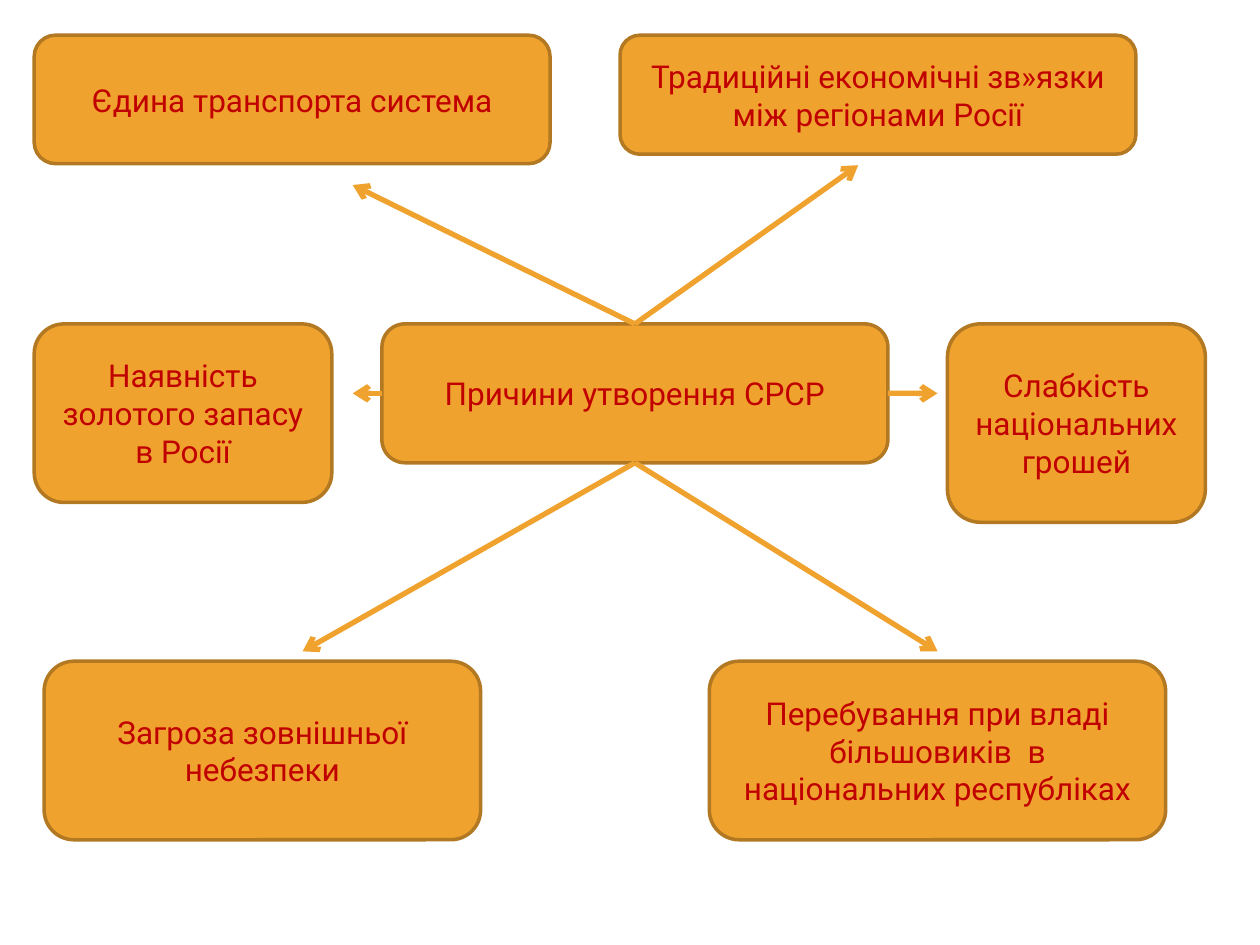
from pptx import Presentation
from pptx.dml.color import RGBColor
from pptx.enum import shapes, text
from pptx.oxml.ns import qn
from pptx.util import Cm, Pt
from lxml import etree

ORANGE = RGBColor(0xF0, 0xA2, 0x2E)
BROWN = RGBColor(0xB2, 0x78, 0x22)
RED = RGBColor(0xC0, 0x00, 0x00)
FONT = "Roboto"

TOP, LEFT, BOTTOM, RIGHT = range(4)  # connection sites of a rectangle

# Content: text, (left, top, width, height) in cm
TOPIC = ("Причини утворення СРСР", (7.7, 6.53, 10.2, 2.8))

# Content: text, box in cm, side of the topic the arrow leaves, arrow tip in cm
REASONS = [
    ("Єдина транспорта система", (0.69, 0.71, 10.4, 2.59), TOP, (7.11, 3.73)),
    ("Традиційні економічні зв»язки між регіонами Росії",
     (12.5, 0.71, 10.4, 2.4), TOP, (17.3, 3.33)),
    ("Наявність золотого запасу в Росії",
     (0.69, 6.53, 6, 3.6), LEFT, (7.11, 7.93)),
    ("Слабкість національних грошей",
     (19.1, 6.53, 5.2, 4), RIGHT, (18.9, 7.93)),
    ("Загроза зовнішньої небезпеки",
     (0.89, 13.33, 8.8, 3.6), BOTTOM, (6.1, 13.13)),
    ("Перебування при владі більшовиків  в національних республіках",
     (14.3, 13.33, 9.2, 3.6), BOTTOM, (18.9, 13.13)),
]


def add_box(slide, label, box):
    shape = slide.shapes.add_shape(
        shapes.MSO_SHAPE.ROUNDED_RECTANGLE, *map(Cm, box))
    shape.shadow.inherit = False
    shape.fill.solid()
    shape.fill.fore_color.rgb = ORANGE
    shape.line.color.rgb = BROWN
    shape.line.width = Pt(2)

    frame = shape.text_frame
    frame.text = label
    frame.word_wrap = True
    frame.vertical_anchor = text.MSO_ANCHOR.MIDDLE
    paragraph = frame.paragraphs[0]
    paragraph.alignment = text.PP_ALIGN.CENTER
    font = paragraph.runs[0].font
    font.name = FONT
    font.size = Pt(18)
    font.color.rgb = RED
    return shape


def add_arrow(slide, source, side, tip):
    x, y = map(Cm, tip)
    arrow = slide.shapes.add_connector(
        shapes.MSO_CONNECTOR.STRAIGHT, x, y, x, y)
    arrow.begin_connect(source, side)
    arrow.line.color.rgb = ORANGE
    arrow.line.width = Pt(3)
    # Arrowhead at the tip, no shadow
    line = arrow.line._get_or_add_ln()
    etree.SubElement(line, qn("a:tailEnd"), type="arrow")
    etree.SubElement(arrow._element.spPr, qn("a:effectLst"))


def main():
    presentation = Presentation()
    presentation.slide_width = Cm(25.4)
    presentation.slide_height = Cm(19.05)
    slide = presentation.slides.add_slide(presentation.slide_layouts[6])

    # Boxes first, arrows on top
    topic = add_box(slide, *TOPIC)
    for label, box, _, _ in REASONS:
        add_box(slide, label, box)
    for _, _, side, tip in REASONS:
        add_arrow(slide, topic, side, tip)

    presentation.save("out.pptx")


if __name__ == "__main__":
    main()
